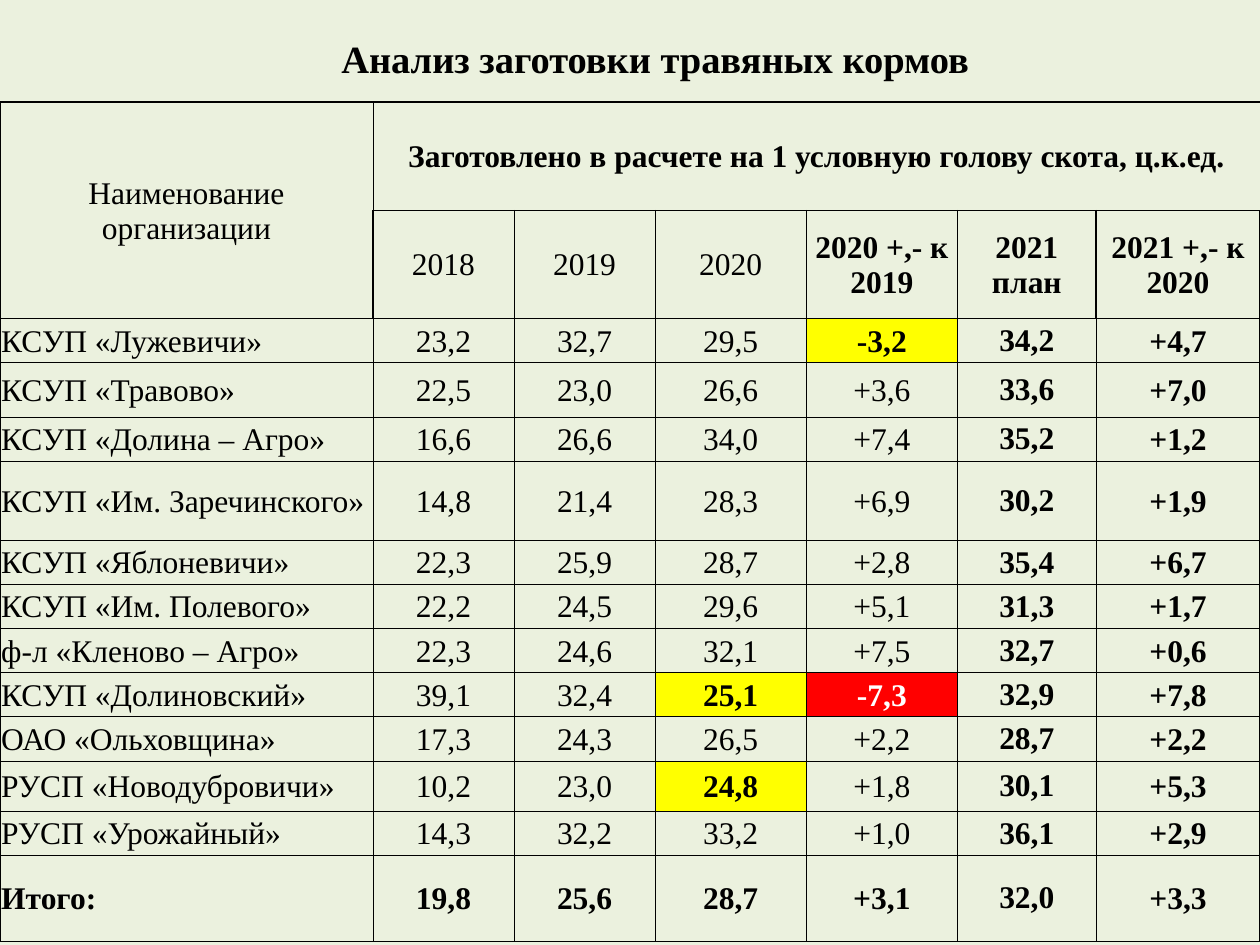
"""Build a one-slide table analysing the grass fodder harvest by farm."""
from lxml import etree
from pptx import Presentation
from pptx.dml.color import RGBColor
from pptx.enum import text
from pptx.oxml import ns
from pptx.util import Inches, Pt

FONT = "Times New Roman"
BLACK = RGBColor(0x00, 0x00, 0x00)
WHITE = RGBColor(0xFF, 0xFF, 0xFF)
PALE_GREEN = RGBColor(0xEB, 0xF1, 0xDE)
YELLOW = RGBColor(0xFF, 0xFF, 0x00)
RED = RGBColor(0xFF, 0x00, 0x00)

TITLE = "Анализ заготовки травяных кормов"
HEADERS = [
    ["Наименование организации",
     "Заготовлено в расчете на 1 условную голову скота, ц.к.ед.", "", "", "", "", ""],
    ["", "2018", "2019", "2020", "2020 +,- к 2019", "2021 план", "2021 +,- к 2020"],
]
FARMS = [
    ["КСУП «Лужевичи»", "23,2", "32,7", "29,5", "-3,2", "34,2", "+4,7"],
    ["КСУП «Травово»", "22,5", "23,0", "26,6", "+3,6", "33,6", "+7,0"],
    ["КСУП «Долина – Агро»", "16,6", "26,6", "34,0", "+7,4", "35,2", "+1,2"],
    ["КСУП «Им. Заречинского»", "14,8", "21,4", "28,3", "+6,9", "30,2", "+1,9"],
    ["КСУП «Яблоневичи»", "22,3", "25,9", "28,7", "+2,8", "35,4", "+6,7"],
    ["КСУП «Им. Полевого»", "22,2", "24,5", "29,6", "+5,1", "31,3", "+1,7"],
    ["ф-л «Кленово – Агро»", "22,3", "24,6", "32,1", "+7,5", "32,7", "+0,6"],
    ["КСУП «Долиновский»", "39,1", "32,4", "25,1", "-7,3", "32,9", "+7,8"],
    ["ОАО «Ольховщина»", "17,3", "24,3", "26,5", "+2,2", "28,7", "+2,2"],
    ["РУСП «Новодубровичи»", "10,2", "23,0", "24,8", "+1,8", "30,1", "+5,3"],
    ["РУСП «Урожайный»", "14,3", "32,2", "33,2", "+1,0", "36,1", "+2,9"],
]
TOTAL = ["Итого:", "19,8", "25,6", "28,7", "+3,1", "32,0", "+3,3"]
ROWS = HEADERS + FARMS + [TOTAL]
HIGHLIGHTS = {(2, 4): (YELLOW, BLACK), (9, 3): (YELLOW, BLACK),
              (9, 4): (RED, WHITE), (11, 3): (YELLOW, BLACK)}

COLUMN_WIDTHS = [2.96, 1.12, 1.12, 1.2, 1.2, 1.1, 1.3]
ROW_HEIGHTS = [0.86, 0.86, 0.35, 0.43, 0.35, 0.63] + [0.35] * 5 + [0.4, 0.35, 0.68]
PLAN_COLUMN = 5
LAST_COLUMN = len(COLUMN_WIDTHS) - 1


def is_bold(row, column):
    if row == 0:
        return column > 0
    if row == 1:
        return column >= 4
    return column >= PLAN_COLUMN or row == len(ROWS) - 1 or (row, column) in HIGHLIGHTS


def border_widths(row, column):
    heavy = {
        "L": column == 0 or (row == 1 and column in (1, LAST_COLUMN)),
        "R": column == LAST_COLUMN or (row == 1 and column in (0, PLAN_COLUMN)),
        "T": row == 0,
        "B": False,
    }
    return {side: 1 if thick else 0.5 for side, thick in heavy.items()}


def add_borders(cell, widths):
    properties = cell._tc.get_or_add_tcPr()
    for side, width in widths.items():
        line = etree.SubElement(properties, ns.qn(f"a:ln{side}"), w=str(Pt(width)))
        fill = etree.SubElement(line, ns.qn("a:solidFill"))
        etree.SubElement(fill, ns.qn("a:srgbClr"), val=str(BLACK))


def style_font(paragraph, size, bold, color):
    font = paragraph.font
    font.name, font.size, font.bold = FONT, Pt(size), bold
    font.color.rgb = color


def fill_cell(cell, row, column):
    background, color = HIGHLIGHTS.get((row, column), (PALE_GREEN, BLACK))
    cell.text = ROWS[row][column]
    cell.vertical_anchor = text.MSO_ANCHOR.MIDDLE
    margin = Inches(0 if column == PLAN_COLUMN and row > 1 else 0.01)
    cell.margin_left = cell.margin_right = cell.margin_top = margin
    cell.margin_bottom = 0
    add_borders(cell, border_widths(row, column))
    cell.fill.solid()
    cell.fill.fore_color.rgb = background
    para = cell.text_frame.paragraphs[0]
    is_name = column == 0 and row > 1
    para.alignment = text.PP_ALIGN.LEFT if is_name else text.PP_ALIGN.CENTER
    style_font(para, 18, is_bold(row, column), color)


def add_harvest_table(page):
    frame = page.shapes.add_table(len(ROWS), len(COLUMN_WIDTHS), 0, Inches(0.81),
                                  Inches(10), Inches(sum(ROW_HEIGHTS)))
    table = frame.table
    table.first_row = table.horz_banding = False
    for column, width in zip(table.columns, COLUMN_WIDTHS):
        column.width = Inches(width)
    for row, height in zip(table.rows, ROW_HEIGHTS):
        row.height = Inches(height)
    for row in range(len(ROWS)):
        for column in range(len(COLUMN_WIDTHS)):
            fill_cell(table.cell(row, column), row, column)
    table.cell(0, 0).merge(table.cell(1, 0))
    table.cell(0, 1).merge(table.cell(0, LAST_COLUMN))


def set_title(page):
    title = page.shapes.title
    title.left, title.top = Inches(1.46), Inches(0.23)
    title.width, title.height = Inches(7.48), Inches(0.47)
    title.text_frame.text = TITLE
    title.text_frame.vertical_anchor = text.MSO_ANCHOR.TOP
    para = title.text_frame.paragraphs[0]
    para.alignment = text.PP_ALIGN.CENTER
    style_font(para, 22, True, BLACK)


def main():
    deck = Presentation()
    deck.slide_width, deck.slide_height = Inches(10), Inches(7.5)
    page = deck.slides.add_slide(deck.slide_layouts[5])
    page.background.fill.solid()
    page.background.fill.fore_color.rgb = PALE_GREEN
    set_title(page)
    add_harvest_table(page)
    deck.save("out.pptx")


if __name__ == "__main__":
    main()
